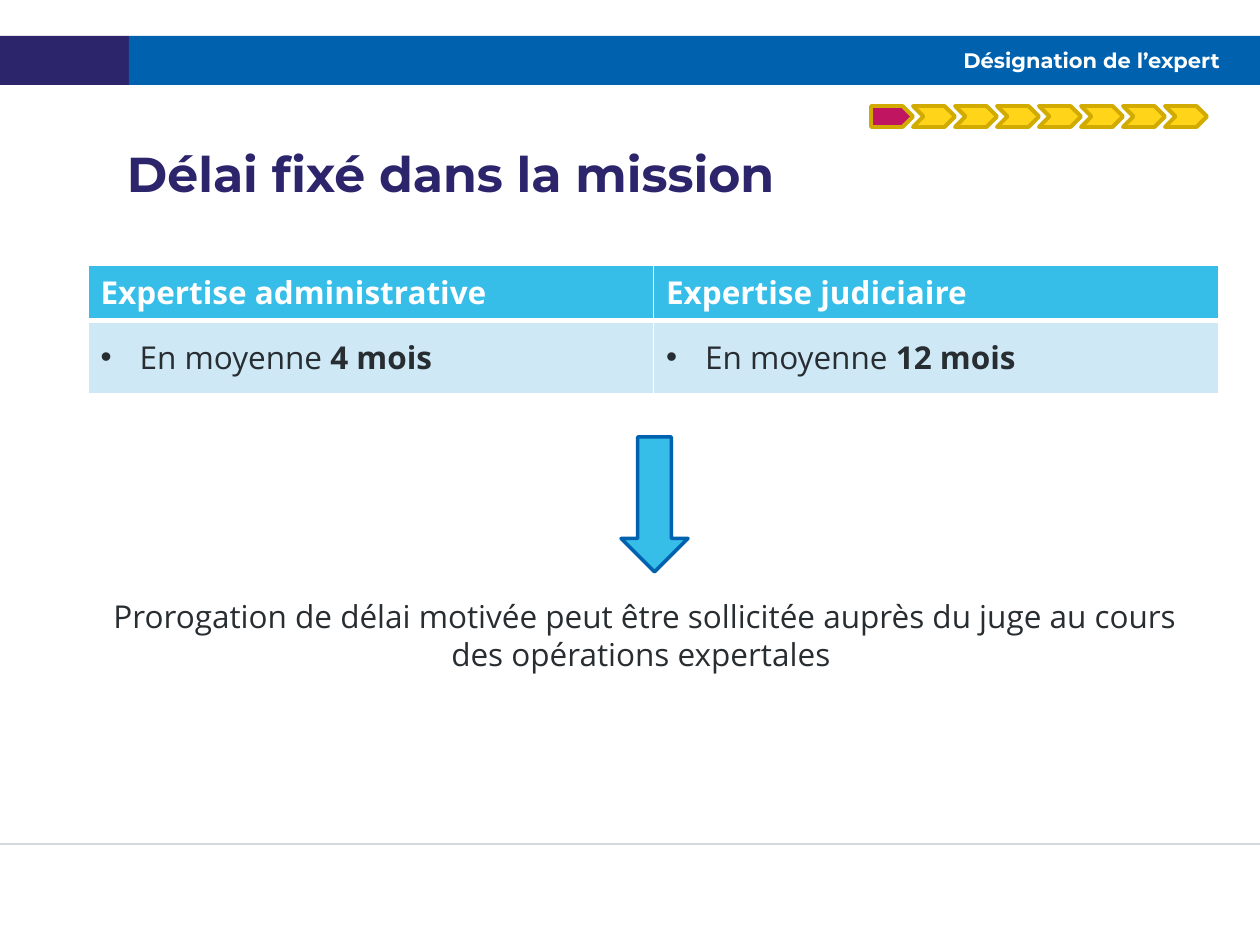
from pptx import Presentation
from pptx.dml.color import RGBColor
from pptx.enum.shapes import MSO_CONNECTOR, MSO_SHAPE
from pptx.enum.text import MSO_ANCHOR as Anchor, MSO_AUTO_SIZE as AutoSize, PP_ALIGN as Align
from pptx.oxml.ns import qn
from pptx.util import Pt
from lxml.etree import SubElement

EMU_PER_PX = 914400 / 126
WIDTH, HEIGHT = 1260, 945
HEADING_FONT, TEXT_FONT = "Montserrat", "Open Sans"
COLORS = {
    "white": "FFFFFF", "navy": "2C256B", "blue": "0062AE", "sky": "36BDE8",
    "pale": "CEE8F6", "text": "272D31", "rule": "D2D9DA",
    "magenta": "C01662", "yellow": "FFD419", "gold": "D2AB00",
}


def px(value):
    return round(value * EMU_PER_PX)


def color(name):
    return RGBColor.from_string(COLORS[name])


def format_run(run, font, size, color_name, bold=False):
    run.font.name = font
    run.font.size = Pt(size)
    run.font.bold = bold
    run.font.color.rgb = color(color_name)


def set_bullet(paragraph, indent, hanging, character=None):
    properties = paragraph._p.get_or_add_pPr()
    properties.set("marL", str(px(indent)))
    properties.set("indent", str(-px(hanging)))
    if character:
        SubElement(properties, qn("a:buFont"), typeface="Arial")
        SubElement(properties, qn("a:buChar"), char=character)
    else:
        SubElement(properties, qn("a:buNone"))


def add_block(shapes, kind, box, fill, line=None, line_width=0):
    shape = shapes.add_shape(kind, *map(px, box))
    shape.shadow.inherit = False
    shape.fill.solid()
    shape.fill.fore_color.rgb = color(fill)
    if line:
        shape.line.color.rgb = color(line)
        shape.line.width = Pt(line_width)
        SubElement(shape.line._get_or_add_ln(), qn("a:round"))
    else:
        shape.line.fill.background()


def add_rule(slide, y):
    rule = slide.shapes.add_connector(MSO_CONNECTOR.STRAIGHT, 0, px(y), px(WIDTH), px(y))
    rule.line.color.rgb = color("rule")
    rule.line.width = Pt(0.75)
    SubElement(rule._element.spPr, qn("a:effectLst"))


def place_placeholder(placeholder, box, text, anchor, size, color_name):
    """Place a placeholder in front of the shapes so far and fill it."""
    element = placeholder._element
    element.getparent().append(element)
    placeholder.left, placeholder.top, placeholder.width, placeholder.height = map(px, box)
    frame = placeholder.text_frame
    frame.text = text
    frame.word_wrap = True
    frame.auto_size = AutoSize.NONE
    frame.vertical_anchor = anchor
    frame.margin_left = frame.margin_right = frame.margin_top = frame.margin_bottom = 0
    paragraph = frame.paragraphs[0]
    format_run(paragraph.runs[0], HEADING_FONT, size, color_name, bold=True)
    return paragraph


def set_borders(cell, bottom_width):
    """Draw white cell borders, ahead of the cell fill."""
    properties = cell._tc.get_or_add_tcPr()
    for side, width in (("L", 1), ("R", 1), ("T", 1), ("B", bottom_width)):
        border = SubElement(properties, qn(f"a:ln{side}"), w=str(Pt(width)))
        fill = SubElement(border, qn("a:solidFill"))
        SubElement(fill, qn("a:srgbClr"), val=COLORS["white"])


def fill_cell(cell, parts, fill, color_name, bottom_width):
    set_borders(cell, bottom_width)
    cell.fill.solid()
    cell.fill.fore_color.rgb = color(fill)
    paragraph = cell.text_frame.paragraphs[0]
    for text, bold in parts:
        run = paragraph.add_run()
        run.text = text
        format_run(run, TEXT_FONT, 18, color_name, bold)
    return paragraph


def add_delay_table(slide, box, columns):
    table = slide.shapes.add_table(2, len(columns), *map(px, box)).table
    table.rows[0].height, table.rows[1].height = px(55), px(72)
    for index, (heading, delay) in enumerate(columns):
        fill_cell(table.cell(0, index), [(heading, True)], "sky", "white", 3)
        cell = table.cell(1, index)
        paragraph = fill_cell(cell, [("En moyenne ", False), (delay, True)], "pale", "text", 1)
        set_bullet(paragraph, 39, 39, "•")
        cell.margin_top = cell.margin_bottom = px(15)


def add_progress(slide, left, top, step, height, count):
    group = slide.shapes.add_group_shape()
    for index in range(count):
        kind, fill = (MSO_SHAPE.CHEVRON, "yellow") if index else (MSO_SHAPE.PENTAGON, "magenta")
        add_block(group.shapes, kind, (left + index * step, top, step, height), fill, "gold", 2.25)


def add_note(slide, box, text):
    frame = slide.shapes.add_textbox(*map(px, box)).text_frame
    frame.word_wrap = True
    frame.text = text
    paragraph = frame.paragraphs[0]
    paragraph.alignment = Align.CENTER
    format_run(paragraph.runs[0], TEXT_FONT, 18, "text")


def main():
    presentation = Presentation()
    presentation.slide_width, presentation.slide_height = px(WIDTH), px(HEIGHT)
    slide = presentation.slides.add_slide(presentation.slide_layouts[1])

    # Header band and footer rule
    add_block(slide.shapes, MSO_SHAPE.RECTANGLE, (0, 36, 129, 49), "navy")
    add_block(slide.shapes, MSO_SHAPE.RECTANGLE, (129, 36, WIDTH - 129, 49), "blue")
    add_rule(slide, 844)

    # Section title and slide heading
    title = place_placeholder(slide.shapes.title, (139, 36, 1081, 49),
                              "Désignation de l’expert", Anchor.MIDDLE, 12, "white")
    title.alignment = Align.RIGHT
    heading = place_placeholder(slide.placeholders[1], (89, 150, 1131, 64),
                                "Délai fixé dans la mission", Anchor.TOP, 28, "navy")
    heading.line_spacing = 0.9
    heading.space_before = Pt(0)
    set_bullet(heading, 38, 0)

    # Average delays and their extension
    add_delay_table(slide, (88, 265, 1131, 127), [
        ("Expertise administrative", "4 mois"),
        ("Expertise judiciaire", "12 mois"),
    ])
    add_note(slide, (73, 591, 1144, 89),
             "Prorogation de délai motivée peut être sollicitée auprès du juge "
             "au cours des opérations expertales ")
    add_block(slide.shapes, MSO_SHAPE.DOWN_ARROW, (621, 437, 67, 135), "sky", "blue", 2)

    # Progress through the procedure
    add_progress(slide, 871, 106, 42, 21, 8)

    presentation.save("out.pptx")


if __name__ == "__main__":
    main()
